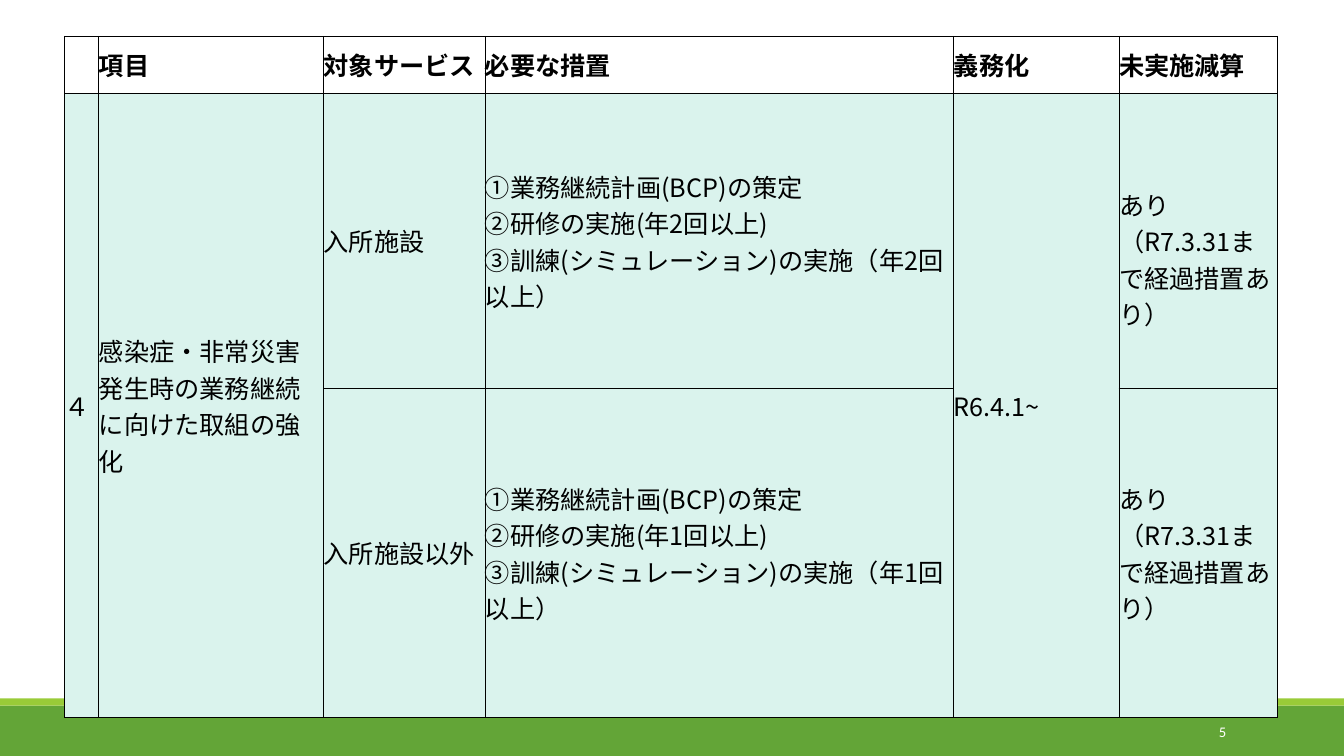
from dataclasses import dataclass

from lxml.etree import SubElement
from pptx import Presentation
from pptx.dml.color import RGBColor
from pptx.enum.shapes import MSO_SHAPE
from pptx.enum.text import MSO_ANCHOR, PP_ALIGN
from pptx.oxml.ns import qn
from pptx.util import Inches, Pt


@dataclass(frozen=True)
class Theme:
    green: str = "63A537"
    lime: str = "99CB38"
    mint: str = "DAF3ED"
    white: str = "FFFFFF"
    black: str = "000000"
    table_font: str = "Noto Sans CJK JP"
    number_font: str = "Calibri"
    table_size: float = 18
    number_size: float = 10.5
    border: float = 0.75


theme = Theme()


def add_run(p, text, font, size, color, bold=False):
    r = p.add_run()
    r.text = text
    r.font.size = Pt(size)
    r.font.bold = bold
    r.font.color.rgb = RGBColor.from_string(color)
    r.font.name = font
    SubElement(r.font._element, qn("a:ea"), typeface=font)


def add_borders(cell):
    tcPr = cell._tc.get_or_add_tcPr()
    for side in ("lnL", "lnR", "lnT", "lnB"):
        ln = SubElement(tcPr, qn(f"a:{side}"), w=str(Pt(theme.border)))
        fill = SubElement(ln, qn("a:solidFill"))
        SubElement(fill, qn("a:srgbClr"), val=theme.black)


prs = Presentation()
prs.slide_width = Inches(13.33)
prs.slide_height = Inches(7.5)
s = prs.slides.add_slide(prs.slide_layouts[6])

# Footer bands
for top, height, color in ((7, 0.5, theme.green), (6.93, 0.07, theme.lime)):
    sp = s.shapes.add_shape(MSO_SHAPE.RECTANGLE, 0, Inches(top),
                            prs.slide_width, Inches(height))
    sp.shadow.inherit = False
    sp.fill.solid()
    sp.fill.fore_color.rgb = RGBColor.from_string(color)
    sp.line.fill.background()

# Table of required measures; each line of a cell is one paragraph
col_widths = (0.34, 2.23, 1.6, 4.65, 1.64, 1.57)
row_heights = (0.57, 2.92, 3.27)
reduction = "あり\n（R7.3.31まで経過措置あり）"
measures = "①業務継続計画(BCP)の策定\n②研修の実施(年{0}回以上)\n③訓練(シミュレーション)の実施（年{0}回以上）"
rows = (
    ("", "項目", "対象サービス", "必要な措置", "義務化", "未実施減算"),
    ("４", "感染症・非常災害発生時の業務継続\nに向けた取組の強化", "入所施設",
     measures.format(2), "R6.4.1~", reduction),
    ("", "", "入所施設以外", measures.format(1), "", reduction),
)
table = s.shapes.add_table(len(rows), len(col_widths), Inches(0.64), Inches(0.36),
                           Inches(sum(col_widths)), Inches(sum(row_heights))).table
table.horz_banding = False
for column, width in zip(table.columns, col_widths):
    column.width = Inches(width)
for row, height in zip(table.rows, row_heights):
    row.height = Inches(height)

for i, texts in enumerate(rows):
    for j, text in enumerate(texts):
        cell = table.cell(i, j)
        cell.margin_left = cell.margin_right = cell.margin_top = cell.margin_bottom = 0
        cell.vertical_anchor = MSO_ANCHOR.MIDDLE
        add_borders(cell)
        cell.fill.solid()
        cell.fill.fore_color.rgb = RGBColor.from_string(theme.mint if i else theme.white)
        tf = cell.text_frame
        for k, line in enumerate(text.split("\n") if text else ()):
            p = tf.add_paragraph() if k else tf.paragraphs[0]
            add_run(p, line, theme.table_font, theme.table_size, theme.black, bold=i == 0)

table.cell(1, 5).margin_top = Inches(0.36)
for j in (0, 1, 4):
    table.cell(1, j).merge(table.cell(2, j))

# Slide number
number = s.shapes.add_textbox(Inches(10.83), Inches(7.06), Inches(1.43), Inches(0.4))
tf = number.text_frame
tf.word_wrap = True
tf.vertical_anchor = MSO_ANCHOR.MIDDLE
p = tf.paragraphs[0]
p.alignment = PP_ALIGN.RIGHT
add_run(p, "5", theme.number_font, theme.number_size, theme.white)

prs.save("out.pptx")
